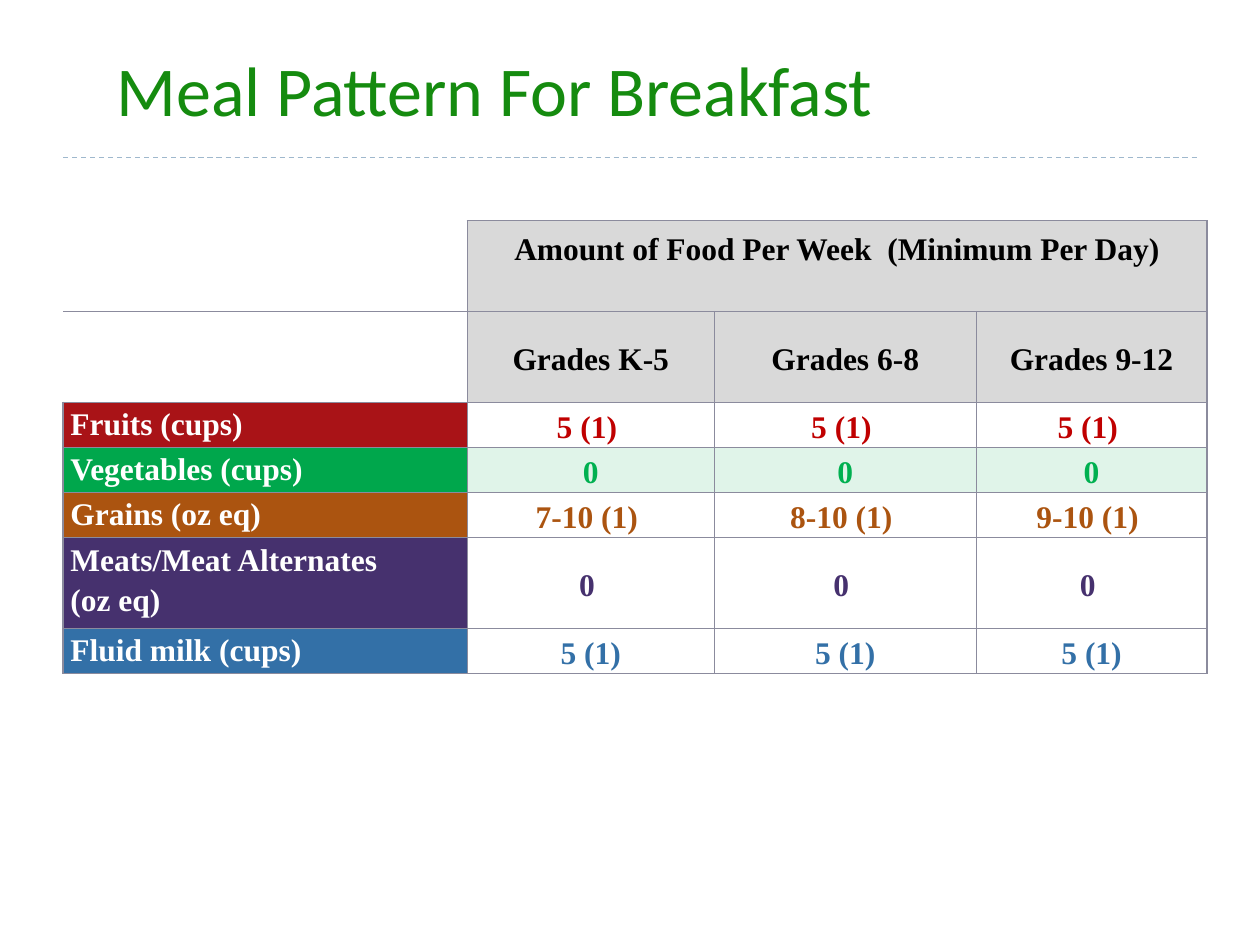
"""Build a slide with the breakfast meal pattern as a table."""
from lxml.etree import SubElement as Sub
from pptx import Presentation as Deck
from pptx.dml.color import RGBColor as Rgb
from pptx.enum.dml import MSO_LINE as Dash
from pptx.enum.shapes import MSO_CONNECTOR as Link
from pptx.enum.text import MSO_ANCHOR as Anchor, PP_ALIGN as Align
from pptx.oxml.ns import qn
from pptx.util import Cm, Pt

TITLE = "Meal Pattern For Breakfast"
HEAD = "Amount of Food Per Week  (Minimum Per Day)"
GRADES = ["Grades K-5", "Grades 6-8", "Grades 9-12"]
FOODS = [
    ("Fruits (cups)", "fruit", "red", ["5 (1) "] * 3),
    ("Vegetables (cups)", "veg", "green", ["0"] * 3),
    ("Grains (oz eq)", "grain", "grain", ["7-10 (1) ", "8-10 (1) ", "9-10 (1) "]),
    ("Meats/Meat Alternates \v(oz eq)", "meat", "meat", ["0 "] * 3),
    ("Fluid milk (cups)", "milk", "milk", ["5 (1)"] * 3),
]
COLORS = {
    "title": "158B0F", "rule": "9FB8CD", "edge": "8B8B9D", "head": "D9D9D9",
    "black": "000000", "white": "FFFFFF", "fruit": "A91317", "red": "C00000",
    "veg": "00A74C", "green": "00B050", "grain": "AB5410", "meat": "46316E",
    "milk": "3370A7",
}
WIDTHS = [8.15, 4.98, 5.28, 4.65]
HEIGHTS = [1.83, 1.83, 0.91, 0.91, 0.91, 1.83, 0.91]
PAD = {"margin_left": Cm(0.15), "margin_right": Cm(0.15),
       "margin_top": 0, "margin_bottom": 0}
BODY = {"name": "Times New Roman", "size": Pt(18), "bold": True}
TOP = {"name": "Calibri", "size": Pt(40)}


def tint(name):
    return Rgb.from_string(COLORS[name])


def apply(item, vals):
    for key, val in vals.items():
        setattr(item, key, val)


def style(para, font, color):
    apply(para.font, font)
    para.font.color.rgb = tint(color)


def edge(cell, bare):
    props = cell._tc.get_or_add_tcPr()
    for side in "LRTB":
        line = Sub(props, qn(f"a:ln{side}"), w=str(Pt(1)))
        if side in bare:
            Sub(line, qn("a:noFill"))
        else:
            fill = Sub(line, qn("a:solidFill"))
            Sub(fill, qn("a:srgbClr"), val=COLORS["edge"])


def paint(cell, name, alpha=None):
    if not name:
        cell.fill.background()
        return
    cell.fill.solid()
    cell.fill.fore_color.rgb = tint(name)
    if alpha:
        color = cell._tc.tcPr.find(".//" + qn("a:solidFill") + "/" + qn("a:srgbClr"))
        for node in cell._tc.tcPr.findall(qn("a:solidFill") + "/" + qn("a:srgbClr")):
            color = node
        Sub(color, qn("a:alpha"), val=str(alpha * 1000))


def write(cell, text, color, align=Align.CENTER, anchor=Anchor.MIDDLE):
    cell.text = text
    apply(cell, {**PAD, "vertical_anchor": anchor})
    para = cell.text_frame.paragraphs[0]
    apply(para, {"alignment": align, "line_spacing": 1.15})
    style(para, BODY, color)


def add_title(slide):
    rule = slide.shapes.add_connector(Link.STRAIGHT, Cm(1.27), Cm(3.18), Cm(24.13), Cm(3.18))
    apply(rule.line, {"width": Pt(0.75), "dash_style": Dash.DASH})
    rule.line.color.rgb = tint("rule")
    Sub(rule._element.spPr, qn("a:effectLst"))
    frame = slide.shapes.add_textbox(Cm(2.1), 0, Cm(22.86), Cm(2.75)).text_frame
    apply(frame, {"text": TITLE, "word_wrap": True, "vertical_anchor": Anchor.BOTTOM})
    style(frame.paragraphs[0], TOP, "title")


def add_meals(slide):
    shape = slide.shapes.add_table(len(HEIGHTS), len(WIDTHS), Cm(1.27), Cm(4.45),
                                   Cm(sum(WIDTHS)), Cm(sum(HEIGHTS)))
    table = shape.table
    apply(table, {"first_row": False, "horz_banding": False})
    for col, width in zip(table.columns, WIDTHS):
        col.width = Cm(width)
    for row, height in zip(table.rows, HEIGHTS):
        row.height = Cm(height)
    for r in range(len(HEIGHTS)):
        for c in range(len(WIDTHS)):
            bare = {(0, 0): "LT", (1, 0): "L"}.get((r, c), "")
            edge(table.cell(r, c), bare)
            paint(table.cell(r, c), "head" if r < 2 and c else None)
    table.cell(0, 1).merge(table.cell(0, 3))
    write(table.cell(0, 1), HEAD, "black", anchor=Anchor.TOP)
    table.cell(0, 1).margin_top = Cm(0.12)
    for c, grade in enumerate(GRADES, 1):
        write(table.cell(1, c), grade, "black")
    for r, (food, fill, ink, amounts) in enumerate(FOODS, 2):
        write(table.cell(r, 0), food, "white", Align.LEFT, Anchor.TOP)
        paint(table.cell(r, 0), fill)
        for c, amount in enumerate(amounts, 1):
            write(table.cell(r, c), amount, ink)
            if fill == "veg":
                paint(table.cell(r, c), fill, 12)


def main():
    deck = Deck()
    apply(deck, {"slide_width": Cm(25.4), "slide_height": Cm(19.05)})
    slide = deck.slides.add_slide(deck.slide_layouts[6])
    add_title(slide)
    add_meals(slide)
    deck.save("out.pptx")


if __name__ == "__main__":
    main()
